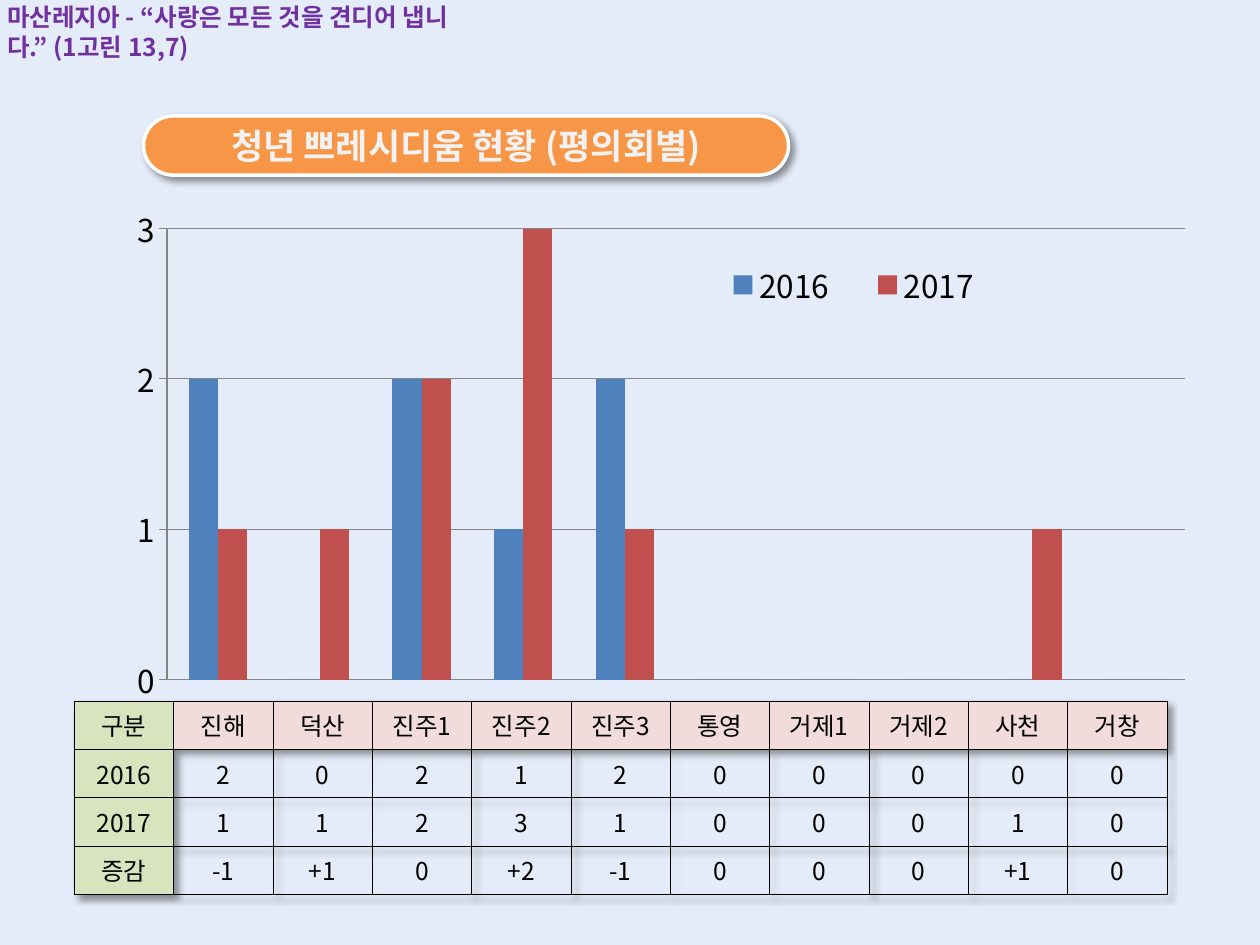
import pptx
import pptx.chart.data
import pptx.dml.color
import pptx.enum.chart
import pptx.enum.shapes
import pptx.enum.text
import pptx.oxml
import pptx.util

Pt = pptx.util.Pt
FONT = "Noto Sans CJK KR"
COLORS = {
    "background": "E3ECF8", "banner": "F79646", "white": "FFFFFF",
    "banner_text": "F2F2F2", "motto": "7030A0", "black": "000000",
    "row_head": "D7E4BD", "column_head": "F2DCDB", "grid": "868686",
    "2016": "4F81BD", "2017": "C0504D",
}
COUNCILS = ["진해", "덕산", "진주1", "진주2", "진주3", "통영", "거제1", "거제2", "사천", "거창"]
COUNTS = {
    "2016": [2, 0, 2, 1, 2, 0, 0, 0, 0, 0],
    "2017": [1, 1, 2, 3, 1, 0, 0, 0, 1, 0],
}
A_NS = 'xmlns:a="http://schemas.openxmlformats.org/drawingml/2006/main"'
C_NS = 'xmlns:c="http://schemas.openxmlformats.org/drawingml/2006/chart"'


def rgb(name):
    """Return the named colour."""
    return pptx.dml.color.RGBColor.from_string(COLORS[name])


def paint(fill, name):
    """Make a fill solid in the named colour."""
    fill.solid()
    fill.fore_color.rgb = rgb(name)


def set_font(font, size, color, bold=False):
    """Set the face, size, colour and weight of a font."""
    font.name, font.size, font.bold = FONT, Pt(size), bold
    font.color.rgb = rgb(color)


def add_shadow(properties):
    """Append a soft shadow to the lower right."""
    properties.append(pptx.oxml.parse_xml(
        f'<a:effectLst {A_NS}><a:outerShdw blurRad="{Pt(4)}" dist="{Pt(3)}" '
        f'dir="2700000" algn="tl" rotWithShape="0"><a:srgbClr val="{COLORS["black"]}">'
        '<a:alpha val="40000"/></a:srgbClr></a:outerShdw></a:effectLst>'))


def add_banner(slide, text):
    """Add the pill-shaped title."""
    sp = slide.shapes.add_shape(
        pptx.enum.shapes.MSO_SHAPE.ROUNDED_RECTANGLE, Pt(82), Pt(66.3), Pt(368.6), Pt(33.8))
    sp.adjustments[0] = 0.5
    paint(sp.fill, "banner")
    sp.line.color.rgb = rgb("white")
    sp.line.width = Pt(2)
    add_shadow(sp._element.spPr)
    tf = sp.text_frame
    tf.vertical_anchor = pptx.enum.text.MSO_ANCHOR.MIDDLE
    p = tf.paragraphs[0]
    p.text = text
    p.alignment = pptx.enum.text.PP_ALIGN.CENTER
    set_font(p.font, 20, "banner_text", True)


def add_motto(slide, text):
    """Add the motto at the top left."""
    tf = slide.shapes.add_textbox(Pt(-3), Pt(-2.2), Pt(283), Pt(24.5)).text_frame
    tf.word_wrap = True
    tf.auto_size = pptx.enum.text.MSO_AUTO_SIZE.SHAPE_TO_FIT_TEXT
    p = tf.paragraphs[0]
    p.text = text
    set_font(p.font, 14, "motto", True)


def style_cell(cell, text, fill):
    """Fill one table cell with text, colour and thin borders."""
    p = cell.text_frame.paragraphs[0]
    p.text = text
    p.alignment = pptx.enum.text.PP_ALIGN.CENTER
    set_font(p.font, 14, "black")
    properties = cell._tc.get_or_add_tcPr()
    for side in ("lnL", "lnR", "lnT", "lnB"):
        properties.append(pptx.oxml.parse_xml(
            f'<a:{side} {A_NS} w="{Pt(0.25)}"><a:solidFill>'
            f'<a:srgbClr val="{COLORS["black"]}"/></a:solidFill></a:{side}>'))
    if fill:
        paint(cell.fill, fill)
    else:
        cell.fill.background()


def add_count_table(slide):
    """Add the table of counts with the yearly change."""
    changes = [after - before for before, after in zip(*COUNTS.values())]
    rows = [["구분", *COUNCILS]]
    rows += [[year, *map(str, counts)] for year, counts in COUNTS.items()]
    rows.append(["증감", *(f"{n:+d}" if n else "0" for n in changes)])
    table = slide.shapes.add_table(
        len(rows), len(rows[0]), Pt(42.5), Pt(400.5), Pt(624.25), Pt(108)).table
    table.first_row = table.horz_banding = False
    add_shadow_before_style(table._tbl.tblPr)
    for column in table.columns:
        column.width = Pt(56.75)
    for i, row in enumerate(rows):
        table.rows[i].height = Pt(27)
        for j, text in enumerate(row):
            fill = "row_head" if j == 0 else "column_head" if i == 0 else None
            style_cell(table.cell(i, j), text, fill)


def add_shadow_before_style(properties):
    """Add a shadow to table properties, keeping the style id last."""
    style = properties[0]
    add_shadow(properties)
    properties.append(style)


def set_layout(element, x, y, w, h, inner=False):
    """Place a plot area or legend by fractions of the chart."""
    for old in element.findall(pptx.oxml.ns.qn("c:layout")):
        element.remove(old)
    target = '<c:layoutTarget val="inner"/>' if inner else ""
    layout = pptx.oxml.parse_xml(
        f'<c:layout {C_NS}><c:manualLayout>{target}'
        '<c:xMode val="edge"/><c:yMode val="edge"/>'
        f'<c:x val="{x}"/><c:y val="{y}"/><c:w val="{w}"/><c:h val="{h}"/>'
        '</c:manualLayout></c:layout>')
    element.insert(0 if inner else 1, layout)


def add_count_chart(slide):
    """Add the clustered columns for both years."""
    data = pptx.chart.data.CategoryChartData()
    data.categories = [str(n) for n in range(1, len(COUNCILS) + 1)]
    for year, counts in COUNTS.items():
        data.add_series(year, counts)
    chart = slide.shapes.add_chart(
        pptx.enum.chart.XL_CHART_TYPE.COLUMN_CLUSTERED,
        Pt(48.2), Pt(110.2), Pt(646.6), Pt(319), data).chart
    set_font(chart.font, 18, "black")
    chart.has_title = False
    chart.has_legend = True
    chart.legend.position = pptx.enum.chart.XL_LEGEND_POSITION.RIGHT
    chart.legend.include_in_layout = False
    set_layout(chart.legend._element, 0.54, 0.11, 0.28, 0.11)
    set_layout(chart._chartSpace.chart.plotArea, 0.073, 0.064, 0.9, 0.808, inner=True)
    plot = chart.plots[0]
    plot.gap_width, plot.overlap = 150, 0
    plot.vary_by_categories = False
    for series in plot.series:
        paint(series.format.fill, series.name)
        series.invert_if_negative = False
    chart.category_axis.visible = False
    axis = chart.value_axis
    axis.minimum_scale, axis.maximum_scale, axis.major_unit = 0, 3, 1
    axis.major_tick_mark = pptx.enum.chart.XL_TICK_MARK.OUTSIDE
    axis.has_major_gridlines = True
    for line in (axis.format.line, axis.major_gridlines.format.line):
        line.color.rgb = rgb("grid")
        line.width = Pt(0.75)


def main():
    """Build and save the slide."""
    prs = pptx.Presentation()
    prs.slide_width, prs.slide_height = Pt(720), Pt(540)
    slide = prs.slides.add_slide(prs.slide_layouts[6])
    paint(slide.background.fill, "background")
    add_banner(slide, "청년 쁘레시디움 현황 (평의회별)")
    add_count_table(slide)
    add_count_chart(slide)
    add_motto(slide, "마산레지아 - “사랑은 모든 것을 견디어 냅니다.” (1고린 13,7)")
    prs.save("out.pptx")


if __name__ == "__main__":
    main()
